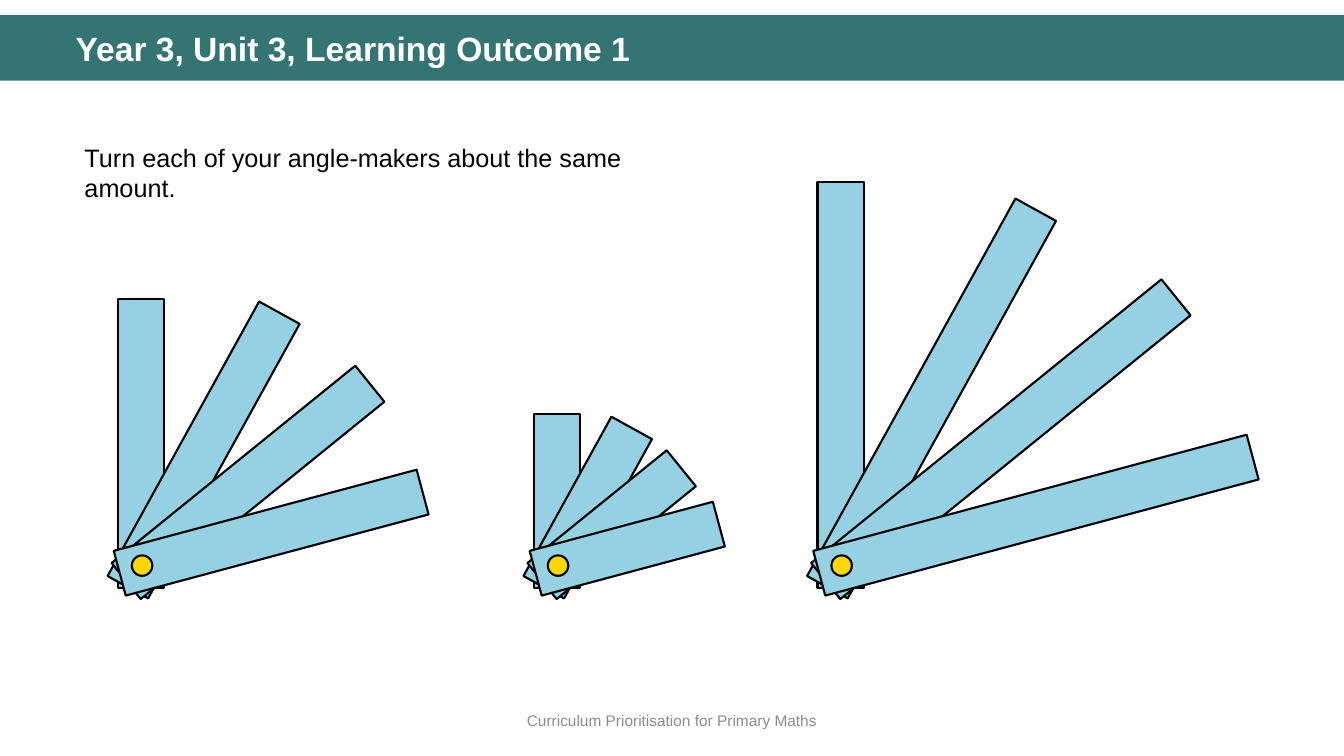
from math import cos, radians, sin

from pptx import Presentation
from pptx.dml.color import RGBColor
from pptx.enum.shapes import MSO_SHAPE
from pptx.enum.text import MSO_ANCHOR, MSO_AUTO_SIZE, PP_ALIGN
from pptx.util import Pt

COLOURS = {
    "band": "347574",
    "strip": "95D1E2",
    "pin": "FFD700",
    "outline": "000000",
    "title": "FFFFFF",
    "text": "000000",
    "footer": "8C8C8C",
}

deck = Presentation()
deck.slide_width, deck.slide_height = Pt(960), Pt(540)
page = deck.slides.add_slide(deck.slide_layouts[5])


def add_part(kind, centre_x, centre_y, width, height, colour, outlined=True):
    part = page.shapes.add_shape(
        kind, Pt(centre_x - width / 2), Pt(centre_y - height / 2), Pt(width), Pt(height)
    )
    part.shadow.inherit = False
    part.fill.solid()
    part.fill.fore_color.rgb = RGBColor.from_string(COLOURS[colour])
    if outlined:
        part.line.color.rgb = RGBColor.from_string(COLOURS["outline"])
        part.line.width = Pt(1.5)
    else:
        part.line.fill.background()
    return part


def write_text(box, place, text, size, colour, align=PP_ALIGN.LEFT, anchor=MSO_ANCHOR.TOP):
    box.left, box.top, box.width, box.height = [Pt(length) for length in place]
    frame = box.text_frame
    frame.word_wrap = True
    frame.auto_size = MSO_AUTO_SIZE.NONE
    frame.vertical_anchor = anchor
    para = frame.paragraphs[0]
    para.alignment = align
    span = para.add_run()
    span.text = text
    span.font.name = "Arial"
    span.font.size = Pt(size)
    span.font.color.rgb = RGBColor.from_string(COLOURS[colour])
    return para


band = add_part(MSO_SHAPE.RECTANGLE, 480, 34.2, 960, 46.8, "band", outlined=False)
page.shapes._spTree.insert(2, band._element)

title = write_text(
    page.shapes.title, (46.8, 19.4, 887, 33.8), "Year 3, Unit 3, Learning Outcome 1", 24, "title"
)
title.line_spacing = 0.9
title.runs[0].font.bold = True

instruction = page.shapes.add_textbox(0, 0, 0, 0)
write_text(
    instruction,
    (53.3, 97.9, 465, 51),
    "Turn each of your angle-makers about the same amount.",
    18,
    "text",
)

footer = page.shapes.add_textbox(0, 0, 0, 0)
write_text(
    footer,
    (0, 500.4, 960, 28.8),
    "Curriculum Prioritisation for Primary Maths",
    11,
    "footer",
    PP_ALIGN.CENTER,
    MSO_ANCHOR.MIDDLE,
)

STRIP_WIDTH = 33.1
PIN_SIZE = 14.6
PIN_Y = 404
turns = [(0, -0.7, 15.8), (28.9, -10.2, 15.5), (51, -11.4, 11.1), (75, -16, 5.5)]
angle_makers = [
    (101.5, (206, 224, 224, 224)),
    (398.6, (124, 130, 128, 135.5)),
    (601.2, (289.5, 308, 322, 320.5)),
]

for pin_x, lengths in angle_makers:
    for (angle, tail_x, tail_y), length in zip(turns, lengths):
        centre_x = pin_x + tail_x + length / 2 * sin(radians(angle))
        centre_y = PIN_Y + tail_y - length / 2 * cos(radians(angle))
        strip = add_part(MSO_SHAPE.RECTANGLE, centre_x, centre_y, STRIP_WIDTH, length, "strip")
        strip.rotation = angle
    add_part(MSO_SHAPE.OVAL, pin_x, PIN_Y, PIN_SIZE, PIN_SIZE, "pin")

deck.save("out.pptx")
